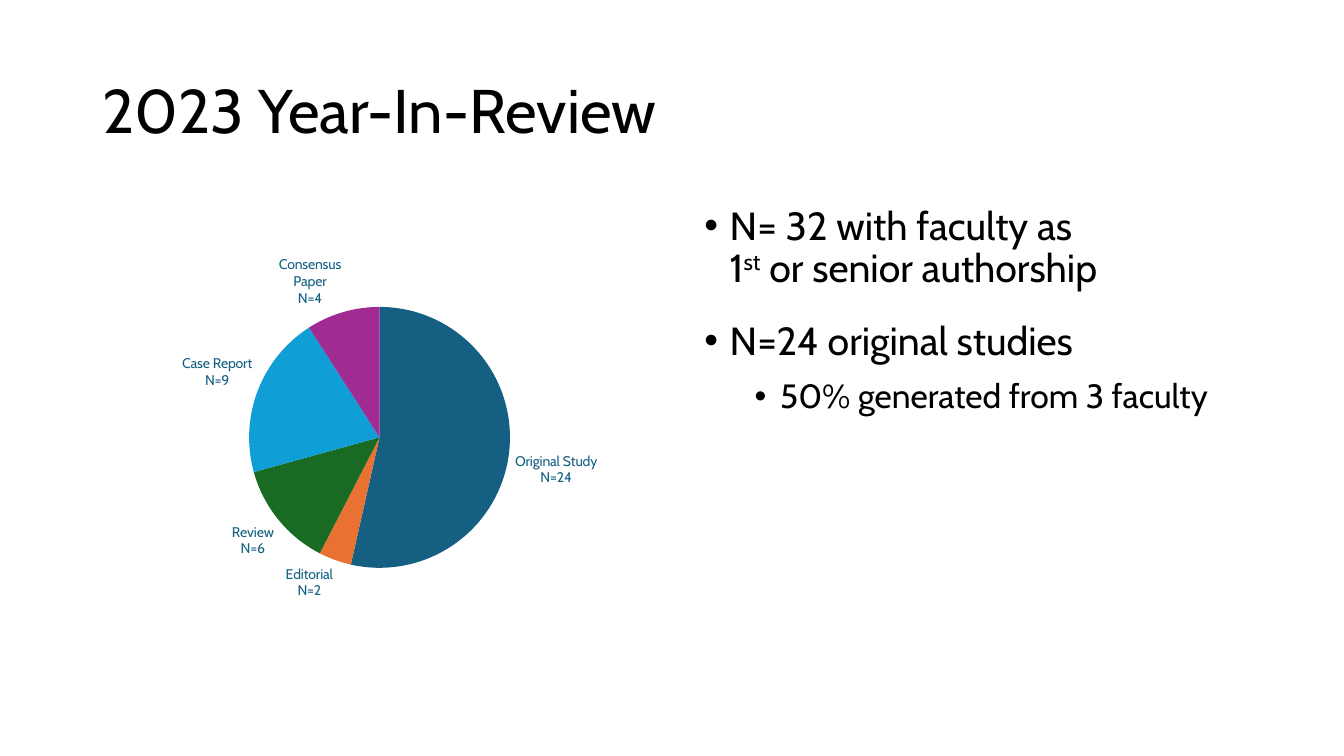
from lxml import etree
from pptx import Presentation
from pptx.chart.data import CategoryChartData
from pptx.dml.color import RGBColor
from pptx.enum.chart import XL_CHART_TYPE, XL_LABEL_POSITION
from pptx.enum.text import MSO_ANCHOR
from pptx.oxml import parse_xml
from pptx.oxml.ns import nsdecls, qn
from pptx.util import Cm, Pt

PIE = XL_CHART_TYPE.PIE
OUT = XL_LABEL_POSITION.OUTSIDE_END
MID = MSO_ANCHOR.MIDDLE
TOP = MSO_ANCHOR.TOP

BLACK = RGBColor(0x00, 0x00, 0x00)
WHITE = RGBColor(0xFF, 0xFF, 0xFF)
TEAL = RGBColor(0x15, 0x60, 0x82)
ORANGE = RGBColor(0xE9, 0x71, 0x32)
GREEN = RGBColor(0x19, 0x6B, 0x24)
BLUE = RGBColor(0x0F, 0x9E, 0xD5)
PURPLE = RGBColor(0xA0, 0x2B, 0x93)

STUDIES = [
    ("Original Study", 53, TEAL, "Original Study\nN=24"),
    ("Editorial", 4, ORANGE, "Editorial\nN=2"),
    ("Review", 13, GREEN, "Review\nN=6"),
    ("Case Report", 20, BLUE, "Case Report\nN=9"),
    ("Consensus", 9, PURPLE, "Consensus\nPaper\nN=4"),
]


class Page:
    face = "Cabin"

    def __init__(self, deck):
        self.slide = deck.slides.add_slide(deck.slide_layouts[6])
        fill = self.slide.background.fill
        fill.solid()
        fill.fore_color.rgb = WHITE

    def style(self, font, size, color):
        font.name = self.face
        font.size = Pt(size)
        font.color.rgb = color

    def box(self, left, top, width, height, anchor=TOP):
        area = self.slide.shapes.add_textbox(Cm(left), Cm(top), Cm(width), Cm(height))
        frame = area.text_frame
        frame.word_wrap = True
        frame.vertical_anchor = anchor
        return frame

    def line(self, para, parts, size, before=0, after=0):
        para.text = parts[0]
        for text in parts[1:]:
            para.add_run().text = text
        para.line_spacing = 0.9
        para.space_before = Pt(before)
        para.space_after = Pt(after)
        for run in para.runs:
            self.style(run.font, size, BLACK)

    def bullet(self, para, left):
        props = para._p.get_or_add_pPr()
        props.set("marL", str(Cm(left)))
        props.set("indent", str(Cm(-0.64)))
        etree.SubElement(props, qn("a:buFont")).set("typeface", "Arial")
        etree.SubElement(props, qn("a:buChar")).set("char", "•")

    def pie(self, left, top, width, height, rows, plot):
        data = CategoryChartData()
        data.categories = [row[0] for row in rows]
        data.add_series("Series 1", [row[1] for row in rows])
        chart = self.slide.shapes.add_chart(
            PIE, Cm(left), Cm(top), Cm(width), Cm(height), data
        ).chart
        chart.has_legend = False
        chart.has_title = False
        self.style(chart.font, 10, BLACK)
        chart.plots[0].vary_by_categories = True
        for spot, (_, _, color, label) in enumerate(rows):
            point = chart.plots[0].series[0].points[spot]
            point.format.fill.solid()
            point.format.fill.fore_color.rgb = color
            point.format.line.fill.background()
            frame = point.data_label.text_frame
            frame.text = label
            for para in frame.paragraphs:
                for run in para.runs:
                    self.style(run.font, 10, TEAL)
            point.data_label.position = OUT
        self.place(chart, plot)

    def place(self, chart, plot):
        area = chart._chartSpace.find(".//" + qn("c:plotArea"))
        old = area.find(qn("c:layout"))
        if old is not None:
            area.remove(old)
        sides = "".join(f'<c:{key} val="{val}"/>' for key, val in zip("xywh", plot))
        area.insert(0, parse_xml(
            f'<c:layout {nsdecls("c")}><c:manualLayout>'
            '<c:layoutTarget val="inner"/><c:xMode val="edge"/><c:yMode val="edge"/>'
            f"{sides}</c:manualLayout></c:layout>"
        ))


def main():
    deck = Presentation()
    deck.slide_width = Cm(33.87)
    deck.slide_height = Cm(19.05)
    page = Page(deck)

    title = page.box(2.33, 1.01, 29.21, 3.68, MID)
    page.line(title.paragraphs[0], ["2023 Year-In-Review"], 44)

    page.pie(2.33, 6.02, 14.05, 9.53, STUDIES, (0.28, 0.18, 0.47, 0.69))

    notes = page.box(17.5, 5.07, 14.05, 12.09)
    first = notes.paragraphs[0]
    page.line(first, ["N= 32 with faculty as \v1", "st", " or senior authorship"], 28, 10, 12)
    first.runs[2].font._element.set("baseline", "30000")
    page.bullet(first, 0.64)
    second = notes.add_paragraph()
    page.line(second, ["N=24 original studies"], 28, 10, 6)
    page.bullet(second, 0.64)
    third = notes.add_paragraph()
    third.level = 1
    page.line(third, ["50% generated from 3 faculty"], 24, 5)
    page.bullet(third, 1.91)

    deck.save("out.pptx")


if __name__ == "__main__":
    main()
